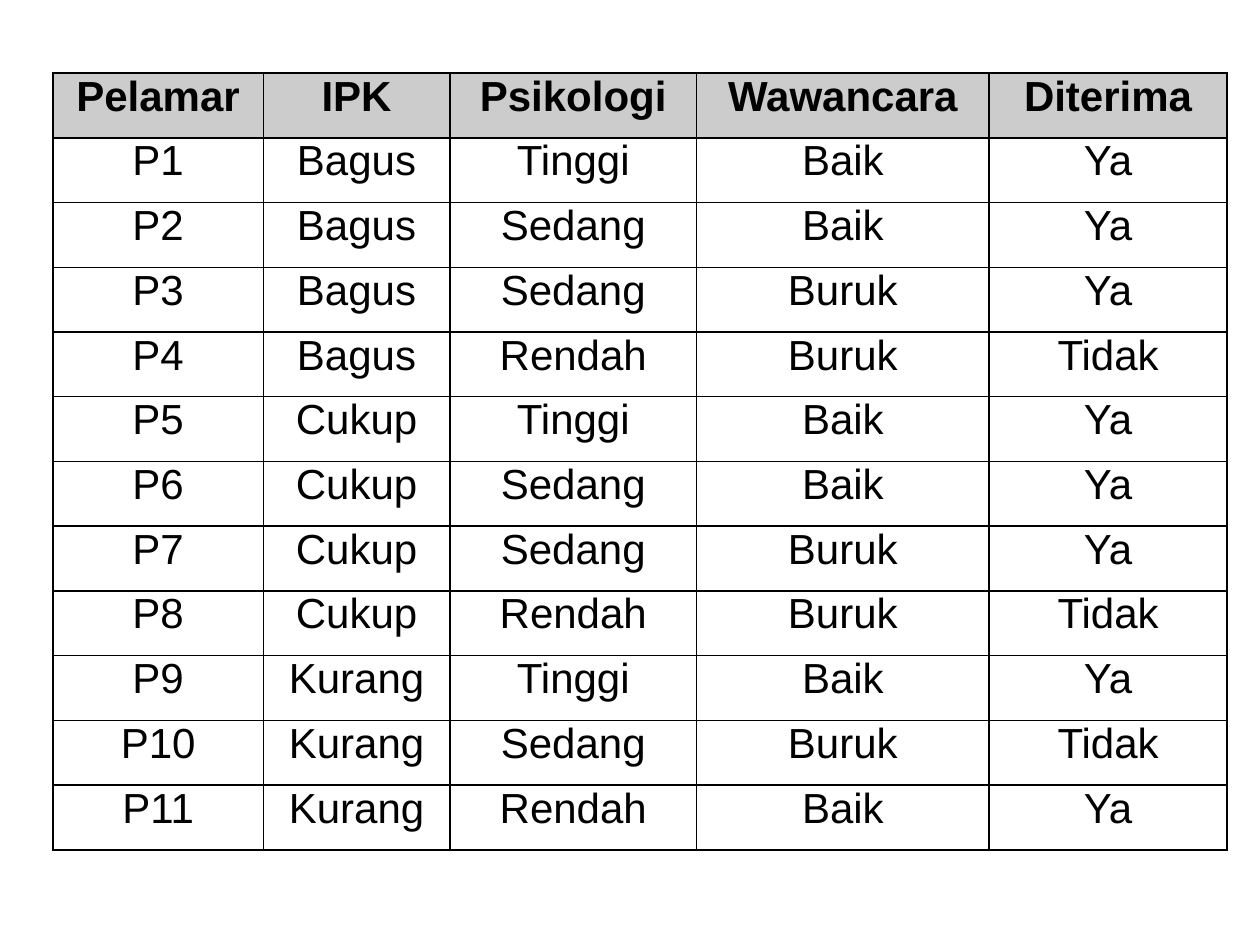
from dataclasses import dataclass

from lxml.etree import SubElement
from pptx import Presentation
from pptx.dml.color import RGBColor
from pptx.enum.text import MSO_ANCHOR, PP_ALIGN
from pptx.oxml.ns import qn
from pptx.util import Inches, Pt


@dataclass(frozen=True)
class Theme:
    font: str = "Arial"
    text_size: int = 24
    ink: str = "000000"
    header_fill: str = "CCCCCC"
    border_width: int = 1
    side_margin: float = 0.07


class SlideBuilder:
    def __init__(self, theme, slide):
        self.theme = theme
        self.slide = slide

    def add_table(self, rows, left, top, column_widths, height):
        frame = self.slide.shapes.add_table(
            len(rows), len(column_widths), Inches(left), Inches(top),
            Inches(sum(column_widths)), Inches(height))
        table = frame.table
        table.horz_banding = False
        for column, width in zip(table.columns, column_widths):
            column.width = Inches(width)
        for row_index, values in enumerate(rows):
            table.rows[row_index].height = Inches(height / len(rows))
            for column_index, value in enumerate(values):
                self.format_cell(table.cell(row_index, column_index), value, row_index == 0)

    def format_cell(self, cell, value, is_header):
        theme = self.theme
        cell.margin_left = cell.margin_right = Inches(theme.side_margin)
        cell.margin_top = cell.margin_bottom = 0
        cell.vertical_anchor = MSO_ANCHOR.TOP
        self.add_borders(cell)
        if is_header:
            cell.fill.solid()
            cell.fill.fore_color.rgb = RGBColor.from_string(theme.header_fill)
        else:
            cell.fill.background()

        paragraph = cell.text_frame.paragraphs[0]
        paragraph.alignment = PP_ALIGN.CENTER
        run = paragraph.add_run()
        run.text = value
        run.font.name = theme.font
        run.font.size = Pt(theme.text_size)
        run.font.bold = is_header
        run.font.color.rgb = RGBColor.from_string(theme.ink)

    def add_borders(self, cell):
        # Border lines precede the fill in the cell properties
        properties = cell._tc.get_or_add_tcPr()
        for side in ("a:lnL", "a:lnR", "a:lnT", "a:lnB"):
            line = SubElement(properties, qn(side), w=str(Pt(self.theme.border_width)))
            fill = SubElement(line, qn("a:solidFill"))
            SubElement(fill, qn("a:srgbClr"), val=self.theme.ink)


HEADER = ("Pelamar", "IPK", "Psikologi", "Wawancara", "Diterima")
APPLICANTS = [
    ("Bagus", "Tinggi", "Baik", "Ya"),
    ("Bagus", "Sedang", "Baik", "Ya"),
    ("Bagus", "Sedang", "Buruk", "Ya"),
    ("Bagus", "Rendah", "Buruk", "Tidak"),
    ("Cukup", "Tinggi", "Baik", "Ya"),
    ("Cukup", "Sedang", "Baik", "Ya"),
    ("Cukup", "Sedang", "Buruk", "Ya"),
    ("Cukup", "Rendah", "Buruk", "Tidak"),
    ("Kurang", "Tinggi", "Baik", "Ya"),
    ("Kurang", "Sedang", "Buruk", "Tidak"),
    ("Kurang", "Rendah", "Baik", "Ya"),
]


def main():
    presentation = Presentation()
    presentation.slide_width = Inches(10)
    presentation.slide_height = Inches(7.5)
    blank_layout = presentation.slide_layouts[6]
    builder = SlideBuilder(Theme(), presentation.slides.add_slide(blank_layout))

    # Applicant table, numbered P1 onwards
    rows = [HEADER] + [(f"P{number}", *results)
                       for number, results in enumerate(APPLICANTS, start=1)]
    builder.add_table(rows, left=0.42, top=0.58,
                      column_widths=(1.67, 1.48, 1.96, 2.32, 1.89), height=6.17)

    presentation.save("out.pptx")


if __name__ == "__main__":
    main()
